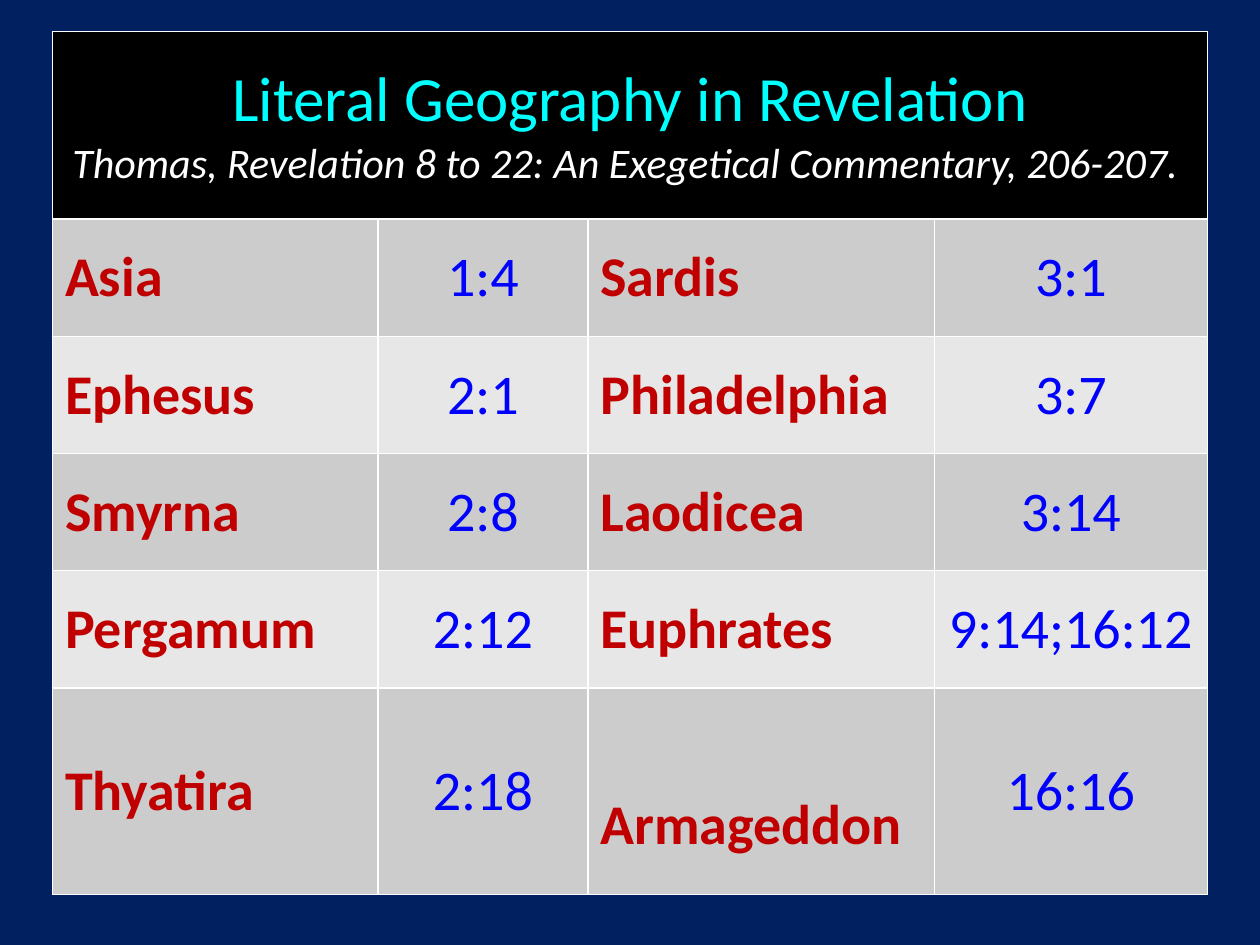
import pptx
import pptx.dml.color
import pptx.enum.text
import pptx.oxml
import pptx.oxml.ns
import pptx.util

ALIGN = pptx.enum.text.PP_ALIGN
HEAD = [
    ("Literal Geography in Revelation", {"size": 36, "color": "00FFFF"}),
    ("Thomas, Revelation 8 to 22: An Exegetical Commentary, 206-207. ",
     {"size": 24, "color": "FFFFFF", "italic": True}),
]
PLACES = [
    ("Asia", "1:4", "Sardis", "3:1"),
    ("Ephesus", "2:1", "Philadelphia", "3:7"),
    ("Smyrna", "2:8", "Laodicea", "3:14"),
    ("Pergamum", "2:12", "Euphrates", "9:14;16:12"),
    ("Thyatira", "2:18", "Armageddon", "16:16"),
]
NAME = {"size": 32, "color": "C00000", "bold": True, "align": ALIGN.LEFT}
VERSE = {"size": 32, "color": "0000FF", "bold": False}
BANDS = ("CCCCCC", "E7E7E7")
COLS = (31, 20, 33, 26)  # parts of the table's width
ROWS = (1.49, 0.93, 0.93, 0.93, 0.93, 1.64)  # inches


def tint(code):
    return pptx.dml.color.RGBColor.from_string(code)


class Deck:
    """Holds the style and the current slide."""
    font = "Calibri"
    ground = "002060"
    rule = "FFFFFF"

    def __init__(self, wide, high):
        self.show = pptx.Presentation()
        self.show.slide_width = pptx.util.Inches(wide)
        self.show.slide_height = pptx.util.Inches(high)
        self.slide = self.show.slides.add_slide(self.show.slide_layouts[6])
        fill = self.slide.background.fill
        fill.solid()
        fill.fore_color.rgb = tint(self.ground)

    def table(self, left, top, cols, rows):
        """Place a table by shares of the slide, with equal side margins."""
        wide = self.show.slide_width
        span = wide * (1 - 2 * left)
        high = pptx.util.Inches(sum(rows))
        grid = self.slide.shapes.add_table(
            len(rows), len(cols), int(wide * left),
            int(self.show.slide_height * top), int(span), high).table
        for key in ("first_row", "horz_banding"):
            setattr(grid, key, False)
        for col, part in zip(grid.columns, cols):
            col.width = int(span * part / sum(cols))
        for row, size in zip(grid.rows, rows):
            row.height = pptx.util.Inches(size)
        return grid

    def cell(self, cell, back, lines):
        """Fill one cell with lines of (text, format)."""
        self.edge(cell)
        cell.fill.solid()
        cell.fill.fore_color.rgb = tint(back)
        cell.vertical_anchor = pptx.enum.text.MSO_ANCHOR.MIDDLE
        frame = cell.text_frame
        for num, (text, form) in enumerate(lines):
            para = frame.add_paragraph() if num else frame.paragraphs[0]
            self.line(para, text, **form)

    def line(self, para, text, size, color, align=ALIGN.CENTER, **form):
        para.alignment = align
        run = para.add_run()
        run.text = text
        run.font.color.rgb = tint(color)
        form.update(name=self.font, size=pptx.util.Pt(size))
        for key, val in form.items():
            setattr(run.font, key, val)

    def edge(self, cell):
        """Rule all four sides of a cell."""
        props = cell._tc.get_or_add_tcPr()
        for side in "LRTB":
            props.append(pptx.oxml.parse_xml(
                f'<a:ln{side} {pptx.oxml.ns.nsdecls("a")} w="12700"><a:solidFill>'
                f'<a:srgbClr val="{self.rule}"/></a:solidFill></a:ln{side}>'))


def main():
    deck = Deck(10, 7.5)
    grid = deck.table(1 / 24, 1 / 30, COLS, ROWS)
    for col in range(len(COLS)):
        deck.cell(grid.cell(0, col), "000000", [] if col else HEAD)
    grid.cell(0, 0).merge(grid.cell(0, len(COLS) - 1))
    for row, places in enumerate(PLACES):
        for col, text in enumerate(places):
            form = VERSE if col % 2 else NAME
            deck.cell(grid.cell(row + 1, col), BANDS[row % 2], [(text, form)])
    # The last name sits one line lower than its row.
    grid.cell(len(PLACES), 2).margin_top = pptx.util.Inches(0.59)
    deck.show.save("out.pptx")


if __name__ == "__main__":
    main()
